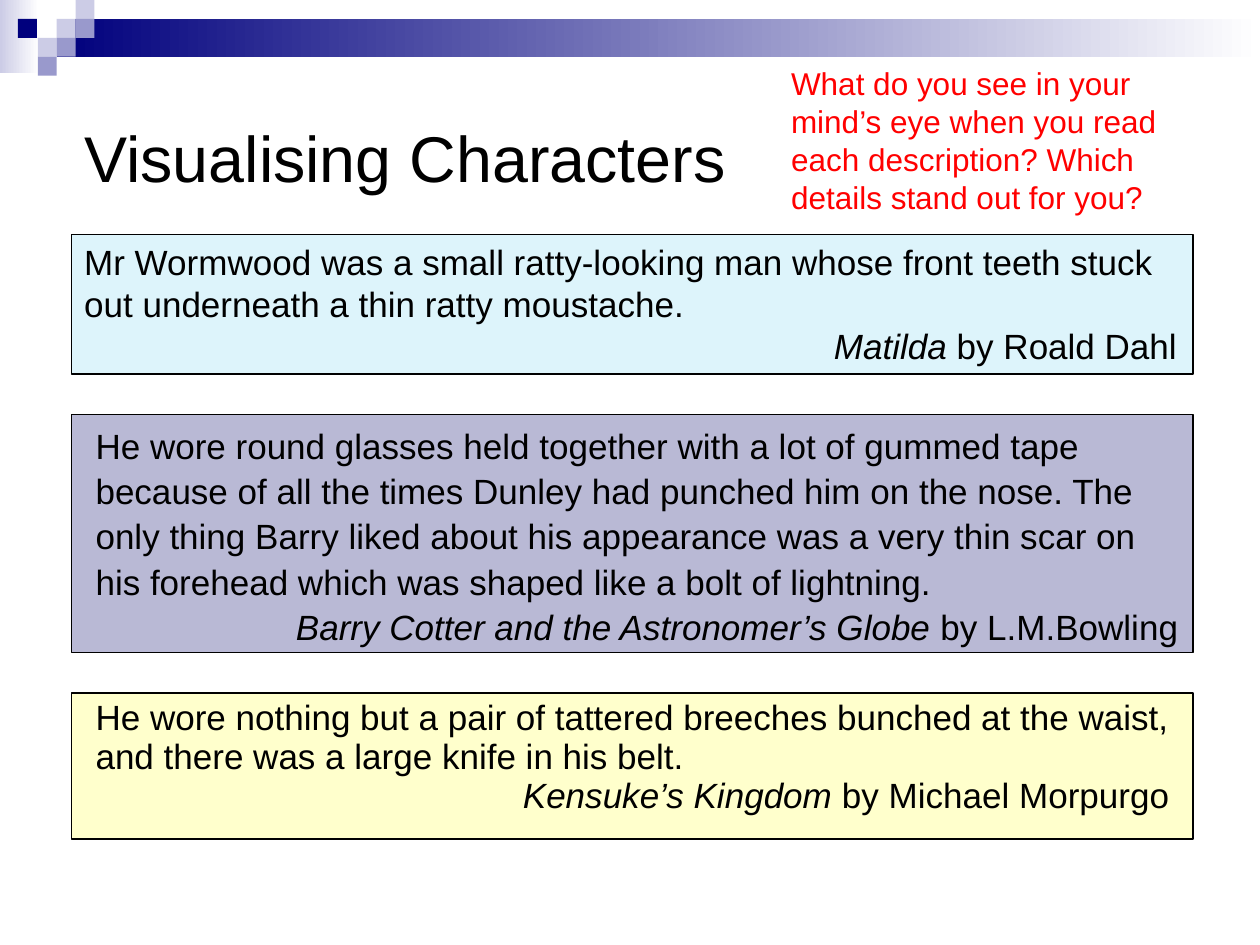
import pptx
import pptx.dml.color
import pptx.enum.shapes
import pptx.enum.text
import pptx.util

RGBColor = pptx.dml.color.RGBColor
Inches, Pt = pptx.util.Inches, pptx.util.Pt
PP_ALIGN = pptx.enum.text.PP_ALIGN
MSO_ANCHOR = pptx.enum.text.MSO_ANCHOR

BLACK = RGBColor(0x00, 0x00, 0x00)
WHITE = RGBColor(0xFF, 0xFF, 0xFF)
RED = RGBColor(0xFF, 0x00, 0x00)
NAVY = RGBColor(0x00, 0x00, 0x7D)
LILAC = RGBColor(0xCC, 0xCC, 0xE6)
VIOLET = RGBColor(0x99, 0x99, 0xCC)
PALE_BLUE = RGBColor(0xDD, 0xF4, 0xFB)
MAUVE = RGBColor(0xB9, 0xB9, 0xD5)
CREAM = RGBColor(0xFF, 0xFF, 0xCC)

CELL = 0.15  # side of one square in the corner pattern
LEFT, WIDTH = 0.57, 8.9  # the column shared by title and quotes

prs = pptx.Presentation()
prs.slide_width, prs.slide_height = Inches(10), Inches(7.5)
s = prs.slides.add_slide(prs.slide_layouts[6])


def add_rect(left, top, width, height, color, fade=False):
    """Add a borderless rectangle, plain or fading to white on the right."""
    sp = s.shapes.add_shape(pptx.enum.shapes.MSO_SHAPE.RECTANGLE,
                            Inches(left), Inches(top), Inches(width), Inches(height))
    sp.shadow.inherit = False
    sp.line.fill.background()
    if fade:
        sp.fill.gradient()
        sp.fill.gradient_angle = 0
        for stop, c in zip(sp.fill.gradient_stops, (color, WHITE)):
            stop.color.rgb = c
    else:
        sp.fill.solid()
        sp.fill.fore_color.rgb = color
    return sp


def style(p, size, color=BLACK):
    p.font.name, p.font.size, p.font.color.rgb = "Arial", Pt(size), color


# Banner and corner squares
add_rect(0, 0, 0.31, 0.58, LILAC, fade=True)
add_rect(3 * CELL, CELL, 10 - 3 * CELL, 2 * CELL, NAVY, fade=True)
for col, row, color in [(3, 1, LILAC), (4, 0, LILAC), (4, 1, VIOLET), (2, 2, LILAC),
                        (0.95, 1, NAVY), (3, 2, VIOLET), (2, 3, VIOLET)]:
    add_rect(col * CELL, row * CELL, CELL, CELL, color)

# Title and question
for left, top, width, height, text, size, color, anchor in [
    (LEFT, 0.84, WIDTH, 0.8, "Visualising Characters", 36.9, BLACK, MSO_ANCHOR.MIDDLE),
    (6.18, 0.46, 3.54, 1.31, "What do you see in your mind’s eye when you read each "
     "description? Which details stand out for you?", 18, RED, MSO_ANCHOR.TOP),
]:
    tf = s.shapes.add_textbox(Inches(left), Inches(top),
                              Inches(width), Inches(height)).text_frame
    tf.word_wrap, tf.vertical_anchor = True, anchor
    p = tf.paragraphs[0]
    p.text = text
    style(p, size, color)

# Quotes: top, height, fill, left indent, right indent, line spacing, text, book, author
quotes = [
    (1.86, 1.11, PALE_BLUE, 0, 0.03, None,
     "Mr Wormwood was a small ratty-looking man whose front teeth stuck out "
     "underneath a thin ratty moustache.",
     "Matilda", "Roald Dahl"),
    (3.29, 1.89, MAUVE, 0.09, 0.02, 25.9,
     "He wore round glasses held together with a lot of gummed tape because of all "
     "the times Dunley had punched him on the nose. The only thing Barry liked about "
     "his appearance was a very thin scar on his forehead which was shaped like a "
     "bolt of lightning.",
     "Barry Cotter and the Astronomer’s Globe", "L.M.Bowling"),
    (5.5, 1.16, CREAM, 0.09, 0.09, 22.1,
     "He wore nothing but a pair of tattered breeches bunched at the waist, and there "
     "was a large knife in his belt.",
     "Kensuke’s Kingdom", "Michael Morpurgo"),
]
for top, height, fill, indent, right, spacing, text, book, author in quotes:
    sp = add_rect(LEFT, top, WIDTH, height, fill)
    sp.line.color.rgb, sp.line.width = BLACK, Pt(0.75)
    tf = sp.text_frame
    tf.word_wrap, tf.vertical_anchor = True, MSO_ANCHOR.TOP
    quote, source = tf.paragraphs[0], tf.add_paragraph()
    quote.text = text
    quote.alignment, source.alignment = PP_ALIGN.LEFT, PP_ALIGN.RIGHT
    r = source.add_run()
    r.text, r.font.italic = book, True
    source.add_run().text = f" by {author}"
    for p in (quote, source):
        style(p, 20)
        p._p.get_or_add_pPr().set("marL", str(Inches(indent)))
        if spacing:
            p.line_spacing = Pt(spacing)
    source._p.get_or_add_pPr().set("marR", str(Inches(right)))

prs.save("out.pptx")
